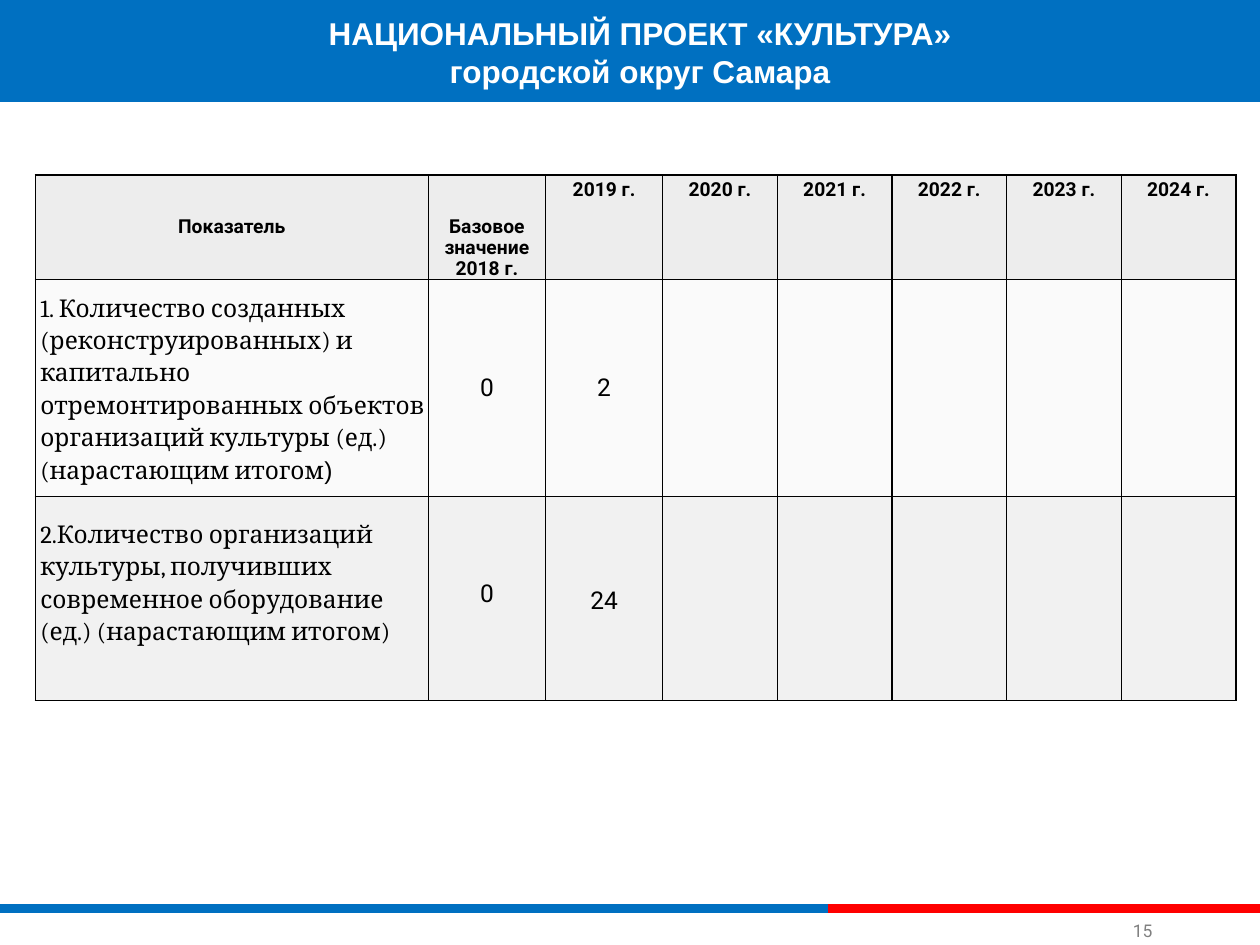
from dataclasses import dataclass
from typing import Optional

from lxml.etree import SubElement
from pptx import Presentation
from pptx.dml.color import RGBColor
from pptx.enum.shapes import MSO_CONNECTOR, MSO_SHAPE
from pptx.enum.text import MSO_ANCHOR as Anchor, MSO_AUTO_SIZE, PP_ALIGN as Align
from pptx.oxml import parse_xml
from pptx.oxml.ns import nsdecls, qn
from pptx.util import Inches, Pt

BLUE = RGBColor(0x00, 0x70, 0xC1)
RED = RGBColor(0xFF, 0x00, 0x00)
WHITE = RGBColor(0xFF, 0xFF, 0xFF)
BLACK = RGBColor(0x00, 0x00, 0x00)
GRAY = RGBColor(0x80, 0x80, 0x80)
HEADER_FILL = RGBColor(0xED, 0xED, 0xED)
LIGHT_FILL = RGBColor(0xF2, 0xF2, 0xF2)
DARK_FILL = RGBColor(0xD9, 0xD9, 0xD9)

COLUMN_WIDTHS = [3.12, 0.93, 0.93] + [0.91] * 5
YEARS = range(2019, 2025)


@dataclass
class CellText:
    text: str
    size: int = 14
    font: str = "Roboto"
    bold: bool = False
    align: Align = Align.CENTER
    anchor: Anchor = Anchor.MIDDLE
    spacing: object = 1.15
    left: float = 0.01
    bottom: float = 0
    tail: str = ""  # closing text set in Arial


@dataclass
class TableRow:
    height: float
    fill: RGBColor
    opacity: Optional[int]
    cells: list[CellText]


def header(text: str, anchor: Anchor = Anchor.TOP, spacing: object = 1.15) -> CellText:
    return CellText(text, size=11, bold=True, anchor=anchor, spacing=spacing)


def indicator(text: str, tail: str = "", bottom: float = 0) -> CellText:
    return CellText(text, font="Cambria", align=Align.LEFT, left=0.04,
                    bottom=bottom, tail=tail)


ROWS = [
    TableRow(0.83, HEADER_FILL, None, [
        header("Показатель", Anchor.MIDDLE, Pt(12)),
        header("Базовое значение 2018 г.", Anchor.BOTTOM, Pt(12)),
        *[header(f"{year} г.") for year in YEARS],
    ]),
    TableRow(1.72, LIGHT_FILL, 36, [
        indicator("1. Количество созданных (реконструированных) и капитально "
                  "отремонтированных объектов организаций культуры (ед.) "
                  "(нарастающим итогом", tail=")"),
        CellText("0", spacing=1.0),
        CellText("2", spacing=1.0),
    ]),
    TableRow(1.62, DARK_FILL, 35, [
        indicator("2.Количество организаций культуры, получивших современное "
                  "оборудование (ед.) (нарастающим итогом)", bottom=0.26),
        CellText("0", spacing=Pt(12)),
        CellText("24"),
    ]),
]


def add_rule(page, left: float, right: float, color: RGBColor) -> None:
    y = Inches(7.21)
    rule = page.shapes.add_connector(MSO_CONNECTOR.STRAIGHT, Inches(left), y, Inches(right), y)
    rule.line.color.rgb = color
    rule.line.width = Pt(5)
    SubElement(rule._element.spPr, qn("a:effectLst"))


def add_title_bar(page) -> None:
    bar = page.shapes.add_shape(MSO_SHAPE.RECTANGLE, 0, Inches(-0.03), Inches(10), Inches(0.84))
    bar.shadow.inherit = False
    bar.fill.solid()
    bar.fill.fore_color.rgb = BLUE
    bar.line.fill.background()


def set_insets(frame) -> None:
    frame.margin_left = frame.margin_right = Inches(0.05)
    frame.margin_top = frame.margin_bottom = Inches(0.05)


def fill_title(page) -> None:
    title = page.shapes.title
    title.left, title.top = Inches(2.5), Inches(0.06)
    title.width, title.height = Inches(5.16), Inches(0.71)
    page.shapes._spTree.append(title._element)  # bring in front of the bar
    frame = title.text_frame
    frame.text = "НАЦИОНАЛЬНЫЙ ПРОЕКТ «КУЛЬТУРА»\nгородской округ Самара"
    frame.auto_size = MSO_AUTO_SIZE.NONE
    frame.vertical_anchor = Anchor.TOP
    set_insets(frame)
    for para in frame.paragraphs:
        para.alignment = Align.CENTER
        style(para.font, "Arial", 18, WHITE, True)


def style(font, name: str, size: int, color: RGBColor, bold: bool = False) -> None:
    font.name, font.size, font.bold = name, Pt(size), bold
    font.color.rgb = color


def add_page_number(page) -> None:
    box = page.shapes.add_textbox(Inches(8.94), Inches(7.27), Inches(0.35), Inches(0.25))
    frame = box.text_frame
    frame.word_wrap = True
    frame.vertical_anchor = Anchor.BOTTOM
    set_insets(frame)
    para = frame.paragraphs[0]
    para.text = "15"
    para.alignment = Align.LEFT
    style(para.font, "Roboto", 10, GRAY)


def paint_cell(cell, color: RGBColor, opacity: Optional[int]) -> None:
    """Set the fill, its opacity in percent, and thin black borders."""
    cell.fill.solid()
    cell.fill.fore_color.rgb = color
    properties = cell._tc.get_or_add_tcPr()
    if opacity is not None:
        tint = properties.find(".//" + qn("a:srgbClr"))
        SubElement(tint, qn("a:alpha")).set("val", str(opacity * 1000))
    for position, side in enumerate(("lnL", "lnR", "lnT", "lnB")):
        properties.insert(position, parse_xml(
            f'<a:{side} {nsdecls("a")} w="{Pt(1)}"><a:solidFill>'
            f'<a:srgbClr val="{BLACK}"/></a:solidFill></a:{side}>'))


def write_cell(cell, content: CellText) -> None:
    cell.vertical_anchor = content.anchor
    cell.margin_left, cell.margin_right = Inches(content.left), Inches(0.01)
    cell.margin_top, cell.margin_bottom = 0, Inches(content.bottom)
    para = cell.text_frame.paragraphs[0]
    para.text = content.text
    para.alignment = content.align
    para.line_spacing = content.spacing
    style(para.font, content.font, content.size, BLACK, content.bold)
    if content.tail:
        span = para.add_run()
        span.text = content.tail
        span.font.name = "Arial"


def add_indicator_table(page) -> None:
    frame = page.shapes.add_table(
        len(ROWS), len(COLUMN_WIDTHS), Inches(0.28), Inches(1.39),
        Inches(sum(COLUMN_WIDTHS)), Inches(sum(row.height for row in ROWS)))
    table = frame.table
    table.first_row = table.horz_banding = False
    for column, width in zip(table.columns, COLUMN_WIDTHS):
        column.width = Inches(width)
    for table_row, row in zip(table.rows, ROWS):
        table_row.height = Inches(row.height)
        for cell in table_row.cells:
            paint_cell(cell, row.fill, row.opacity)
        for cell, content in zip(table_row.cells, row.cells):
            write_cell(cell, content)


def main() -> None:
    deck = Presentation()
    deck.slide_width, deck.slide_height = Inches(10), Inches(7.5)
    page = deck.slides.add_slide(deck.slide_layouts[5])
    add_rule(page, 0, 6.57, BLUE)
    add_rule(page, 6.57, 10, RED)
    add_title_bar(page)
    add_page_number(page)
    fill_title(page)
    add_indicator_table(page)
    deck.save("out.pptx")


if __name__ == "__main__":
    main()
